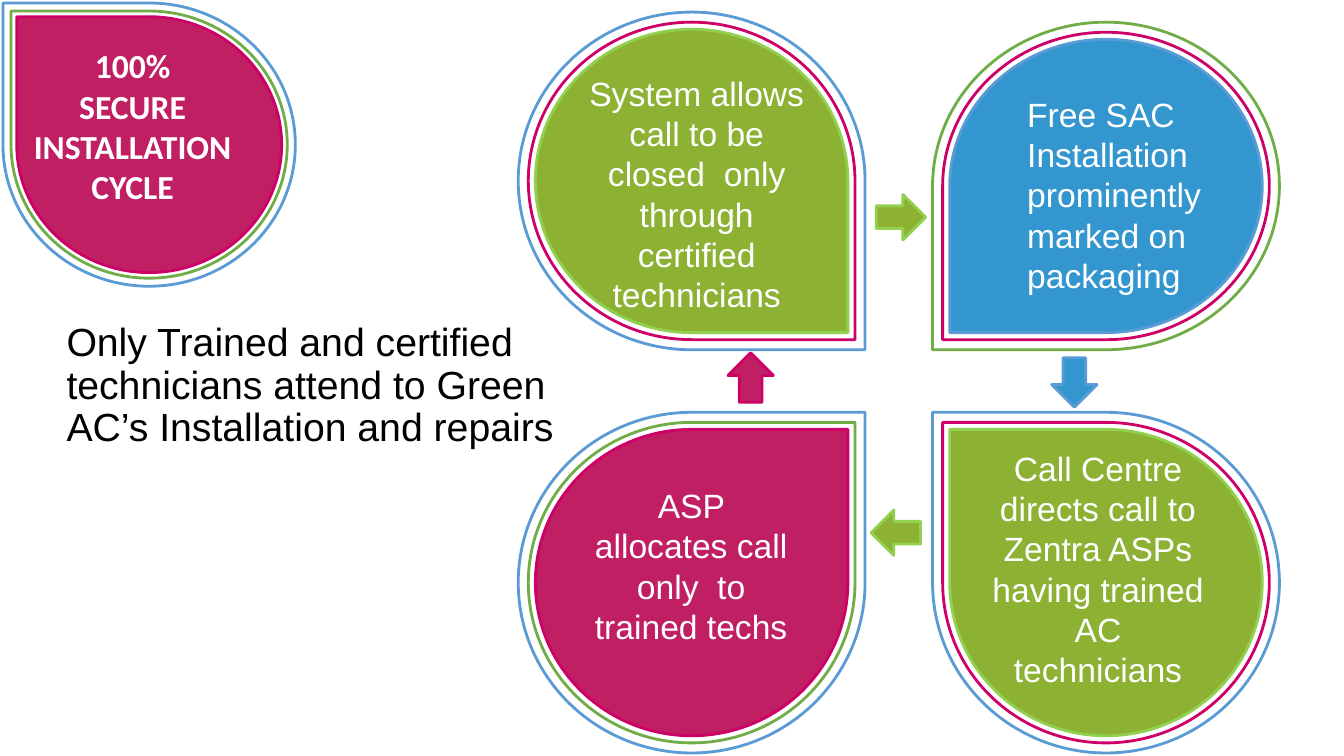
from pptx import Presentation
from pptx.dml.color import RGBColor
from pptx.enum.shapes import MSO_SHAPE as Shape
from pptx.enum.text import MSO_ANCHOR as Anchor, PP_ALIGN as Align
from pptx.util import Inches, Pt

WHITE, BLACK = "FFFFFF", "000000"
BLUE, BLUE_LINE = "3396CE", "5B9BD5"
GREEN, GREEN_LINE, LIME_LINE = "8CB133", "70AD47", "92D050"
PINK, PINK_LINE = "C01F63", "CC0066"

presentation = Presentation()
presentation.slide_width, presentation.slide_height = Inches(13.33), Inches(7.5)
slide = presentation.slides.add_slide(presentation.slide_layouts[6])


def add_outlined(kind, left, top, width, height, line, fill=None):
    """Add a preset shape without shadow; no fill colour leaves it hollow."""
    shape = slide.shapes.add_shape(
        kind, Inches(left), Inches(top), Inches(width), Inches(height))
    shape.shadow.inherit = False
    if fill:
        shape.fill.solid()
        shape.fill.fore_color.rgb = RGBColor.from_string(fill)
    else:
        shape.fill.background()
    shape.line.color.rgb = RGBColor.from_string(line)
    shape.line.width = Pt(2)
    return shape


def add_text(box, lines, size=24, color=WHITE, align=Align.CENTER,
             font="Arial", bold=False):
    """Add a wrapping text box with one paragraph per line and return its frame."""
    frame = slide.shapes.add_textbox(*map(Inches, box)).text_frame
    frame.word_wrap = True
    for index, line in enumerate(lines):
        paragraph = frame.paragraphs[0] if index == 0 else frame.add_paragraph()
        paragraph.alignment = align
        run = paragraph.add_run()
        run.text = line
        run.font.size, run.font.name, run.font.bold = Pt(size), font, bold
        run.font.color.rgb = RGBColor.from_string(color)
    return frame


# Headline
headline = add_text(
    (0, 3.11, 5.75, 1.45),
    ["Only Trained and certified technicians attend to Green "
     "AC’s Installation and repairs"],
    size=28, color=BLACK, align=Align.LEFT)
headline.vertical_anchor = Anchor.MIDDLE
headline.margin_left = Inches(0.66)
headline.paragraphs[0].line_spacing = 0.9

# Teardrops: two hollow rings around a filled core, flipped to point inwards
LEFT_COLUMN, RIGHT_COLUMN = 5.14, 9.25
TOP_ROW_END, BOTTOM_ROW = 3.47, 4.09
RING_INSETS = (0, 1, 1.7)
teardrops = [
    # left, top, width, height, ring gap, flips, line colours, core fill
    (0.03, 0.03, 2.9, 2.81, 0.08, ["flipH"],
     (BLUE_LINE, GREEN_LINE, PINK_LINE), PINK),
    (LEFT_COLUMN, BOTTOM_ROW, 3.44, 3.38, 0.1, [],
     (BLUE_LINE, GREEN_LINE, PINK_LINE), PINK),
    (LEFT_COLUMN, TOP_ROW_END - 3.35, 3.44, 3.35, 0.1, ["flipV"],
     (BLUE_LINE, PINK_LINE, LIME_LINE), GREEN),
    (RIGHT_COLUMN, TOP_ROW_END - 3.25, 3.44, 3.25, 0.1, ["flipH", "flipV"],
     (GREEN_LINE, PINK_LINE, BLUE_LINE), BLUE),
    (RIGHT_COLUMN, BOTTOM_ROW, 3.44, 3.38, 0.1, ["flipH"],
     (BLUE_LINE, PINK_LINE, LIME_LINE), GREEN),
]
for left, top, width, height, gap, flips, lines, core in teardrops:
    for ring, line, fill in zip(RING_INSETS, lines, (None, None, core)):
        inset = ring * gap
        teardrop = add_outlined(
            Shape.TEAR, left + inset, top + inset,
            width - 2 * inset, height - 2 * inset, line, fill)
        for flip in flips:
            teardrop.element.spPr.xfrm.set(flip, "1")

# Texts on the teardrops
add_text((0.19, 0.4, 2.25, 1.72),
         ["100%", "SECURE", "INSTALLATION", "CYCLE"], font="Calibri", bold=True)
add_text((5.79, 4.76, 2.13, 1.72), ["ASP allocates call only  to trained techs"])
add_text((9.74, 4.39, 2.3, 2.52),
         ["Call Centre directs call to Zentra ASPs having trained AC technicians"])
add_text((5.7, 0.67, 2.42, 2.52),
         ["System allows call to be closed  only through certified technicians"])
add_text((10.09, 0.88, 1.96, 2.12),
         ["Free SAC Installation prominently marked on packaging"],
         align=Align.LEFT)

# Arrows around the cycle, clockwise in quarter turns
ARROW_WIDTH, ARROW_HEIGHT = 0.49, 0.45
arrows = [
    (8.69, 1.93, GREEN, LIME_LINE),
    (10.41, 3.57, BLUE, BLUE_LINE),
    (8.64, 5.06, GREEN, LIME_LINE),
    (7.2, 3.52, PINK, PINK_LINE),
]
for turn, (left, top, fill, line) in enumerate(arrows):
    arrow = add_outlined(
        Shape.RIGHT_ARROW, left, top, ARROW_WIDTH, ARROW_HEIGHT, line, fill)
    arrow.rotation = turn * 90

presentation.save("out.pptx")
